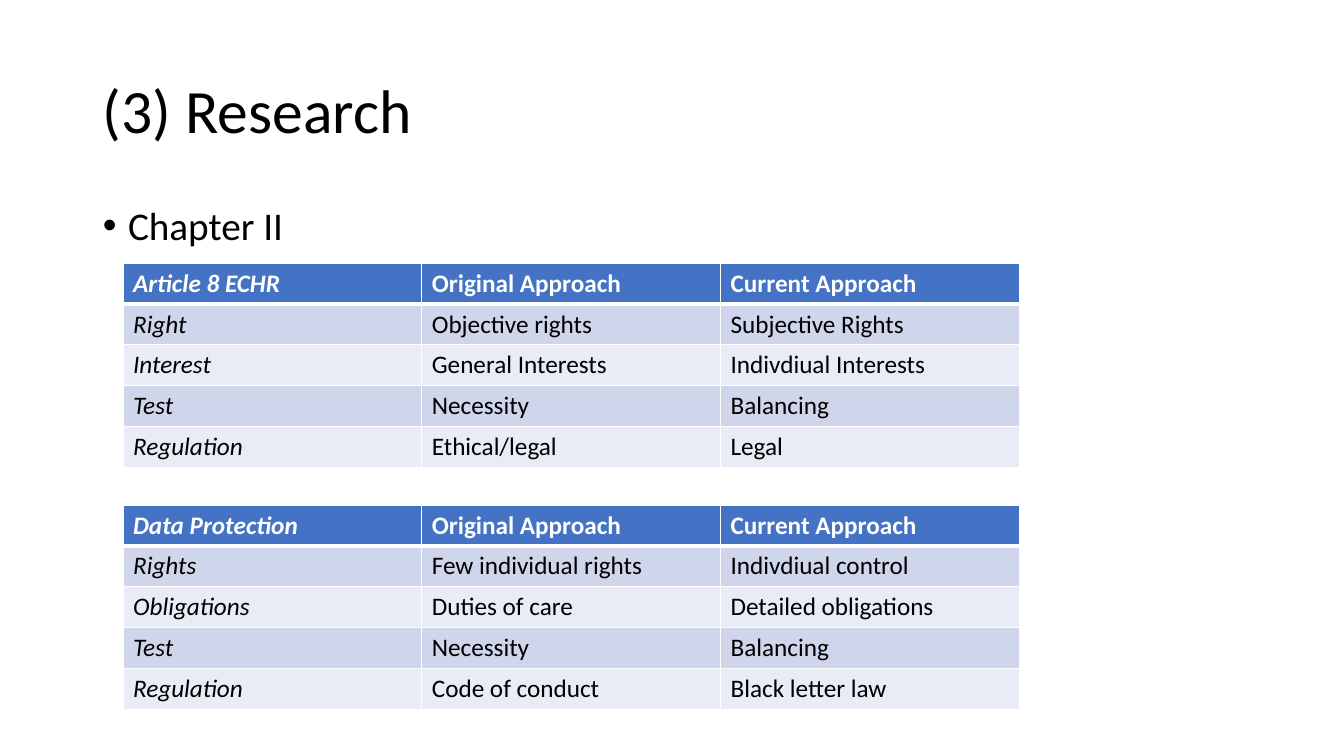
from dataclasses import dataclass

from lxml import etree
from pptx import Presentation
from pptx.dml.color import RGBColor
from pptx.enum.text import MSO_ANCHOR, MSO_AUTO_SIZE, PP_ALIGN
from pptx.oxml.ns import qn
from pptx.util import Inches, Pt

LEFT = PP_ALIGN.LEFT
TOP, MIDDLE = MSO_ANCHOR.TOP, MSO_ANCHOR.MIDDLE
NO_AUTOFIT = MSO_AUTO_SIZE.NONE

FONT = "Calibri"
COLORS = {
    "black": "000000",
    "white": "FFFFFF",
    "header": "4472C4",
    "odd_row": "CFD5EA",
    "even_row": "E9EBF5",
}
TABLE_LEFT, TABLE_WIDTH, TABLE_HEIGHT = 1.22, 8.89, 2.03
THIN, THICK = 1, 3


@dataclass
class Comparison:
    top: float
    rows: list[tuple[str, str, str]]


APPROACHES = ("Original Approach", "Current Approach")
COMPARISONS = [
    Comparison(2.61, [
        ("Article 8 ECHR", *APPROACHES),
        ("Right", "Objective rights", "Subjective Rights"),
        ("Interest", "General Interests", "Indivdiual Interests"),
        ("Test", "Necessity", "Balancing"),
        ("Regulation", "Ethical/legal", "Legal"),
    ]),
    Comparison(5.01, [
        ("Data Protection", *APPROACHES),
        ("Rights", "Few individual rights", "Indivdiual control"),
        ("Obligations", "Duties of care", "Detailed obligations"),
        ("Test", "Necessity", "Balancing"),
        ("Regulation", "Code of conduct", "Black letter law"),
    ]),
]


def write_text(frame, text: str, *, size: float, color: str = "black",
               bold: bool = False, italic: bool = False,
               line_spacing: float = 1.0, space_before: float = 0):
    para = frame.paragraphs[0]
    para.alignment = LEFT
    para.line_spacing = line_spacing
    para.space_before = Pt(space_before)
    span = para.add_run()
    span.text = text
    span.font.name = FONT
    span.font.size = Pt(size)
    span.font.bold = bold
    span.font.italic = italic
    span.font.color.rgb = RGBColor.from_string(COLORS[color])
    return para


def place_box(box, left: float, top: float, width: float, height: float, anchor) -> None:
    box.left, box.top = Inches(left), Inches(top)
    box.width, box.height = Inches(width), Inches(height)
    box.text_frame.auto_size = NO_AUTOFIT
    box.text_frame.vertical_anchor = anchor


def add_bullet(para, indent: float) -> None:
    properties = para._p.get_or_add_pPr()
    properties.set("marL", str(Inches(indent)))
    properties.set("indent", str(Inches(-indent)))
    etree.SubElement(properties, qn("a:buFont")).set("typeface", "Arial")
    etree.SubElement(properties, qn("a:buChar")).set("char", "•")


def set_borders(cell, top: float, bottom: float) -> None:
    properties = cell._tc.get_or_add_tcPr()
    widths = {"lnL": THIN, "lnR": THIN, "lnT": top, "lnB": bottom}
    for position, (side, width) in enumerate(widths.items()):
        line = etree.Element(qn(f"a:{side}"))
        line.set("w", str(Pt(width)))
        fill = etree.SubElement(line, qn("a:solidFill"))
        etree.SubElement(fill, qn("a:srgbClr")).set("val", COLORS["white"])
        properties.insert(position, line)


def fill_cell(cell, text: str, row: int, column: int) -> None:
    is_header = row == 0
    fill = "header" if is_header else "odd_row" if row % 2 else "even_row"
    cell.fill.solid()
    cell.fill.fore_color.rgb = RGBColor.from_string(COLORS[fill])
    set_borders(cell, top=THICK if row == 1 else THIN, bottom=THICK if is_header else THIN)
    write_text(cell.text_frame, text, size=18, color="white" if is_header else "black",
               bold=is_header, italic=column == 0)


def add_comparison(page, comparison: Comparison) -> None:
    rows = comparison.rows
    table = page.shapes.add_table(
        len(rows), len(rows[0]), Inches(TABLE_LEFT), Inches(comparison.top),
        Inches(TABLE_WIDTH), Inches(TABLE_HEIGHT)).table
    for row, texts in enumerate(rows):
        for column, text in enumerate(texts):
            fill_cell(table.cell(row, column), text, row, column)


def main() -> None:
    deck = Presentation()
    deck.slide_width, deck.slide_height = Inches(13.33), Inches(7.5)
    page = deck.slides.add_slide(deck.slide_layouts[1])

    title, body = page.shapes.title, page.placeholders[1]
    place_box(title, 0.92, 0.4, 11.5, 1.45, MIDDLE)
    write_text(title.text_frame, "(3) Research", size=44, line_spacing=0.9)
    place_box(body, 0.92, 2, 11.5, 4.76, TOP)
    chapter = write_text(body.text_frame, "Chapter II", size=28,
                         line_spacing=0.9, space_before=10)
    add_bullet(chapter, 0.25)

    for comparison in COMPARISONS:
        add_comparison(page, comparison)
    deck.save("out.pptx")


if __name__ == "__main__":
    main()
